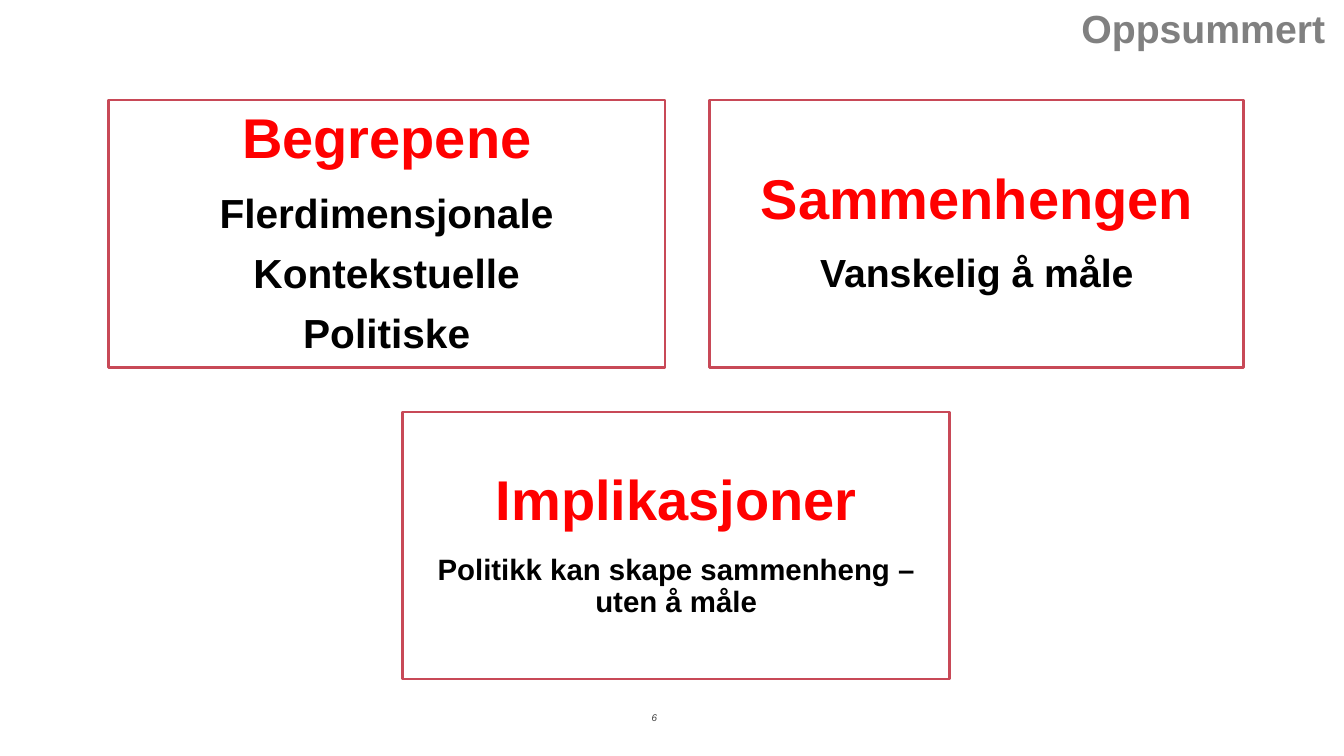
from pptx import Presentation
from pptx.dml.color import RGBColor
from pptx.enum import shapes, text
from pptx.util import Pt

COLORS = {"white": "FFFFFF", "border": "C84957", "heading": "FF0000",
          "body": "000000", "title": "808080", "number": "404040"}
ALIGN = text.PP_ALIGN
ANCHOR = text.MSO_ANCHOR


def color(name):
    return RGBColor.from_string(COLORS[name])


def write(para, words, *, size, fill, font="Arial", bold=False, italic=False,
          align=ALIGN.LEFT, line=None, after=0):
    para.alignment = align
    para.space_after = Pt(after)
    if line:
        para.line_spacing = line
    span = para.add_run()
    span.text = words
    span.font.name = font
    span.font.size = Pt(size)
    span.font.bold = bold
    span.font.italic = italic
    span.font.color.rgb = color(fill)


class SummarySlide:
    inset = 12.2
    border = 2
    heading_size = 40
    after_ratio = 0.4

    def __init__(self, deck):
        self.page = deck.slides.add_slide(deck.slide_layouts[6])

    def frame(self, box, inset, anchor):
        frame = box.text_frame
        frame.word_wrap = True
        frame.vertical_anchor = anchor
        frame.margin_left = frame.margin_right = Pt(inset)
        frame.margin_top = frame.margin_bottom = Pt(inset)
        return frame

    def label(self, words, left, top, width, height, anchor=ANCHOR.TOP, **style):
        box = self.page.shapes.add_textbox(Pt(left), Pt(top), Pt(width), Pt(height))
        write(self.frame(box, 0, anchor).paragraphs[0], words, **style)

    def card(self, heading, lines, size, left, top, width, height):
        box = self.page.shapes.add_shape(shapes.MSO_SHAPE.RECTANGLE,
                                         Pt(left), Pt(top), Pt(width), Pt(height))
        box.shadow.inherit = False
        box.fill.solid()
        box.fill.fore_color.rgb = color("white")
        box.line.color.rgb = color("border")
        box.line.width = Pt(self.border)
        frame = self.frame(box, self.inset, ANCHOR.MIDDLE)
        rows = [(heading, self.heading_size, "heading")]
        rows += [(words, size, "body") for words in lines]
        for index, (words, points, fill) in enumerate(rows):
            para = frame.add_paragraph() if index else frame.paragraphs[0]
            write(para, words, size=points, fill=fill, bold=True,
                  align=ALIGN.CENTER, line=0.9, after=points * self.after_ratio)


def main():
    deck = Presentation()
    deck.slide_width, deck.slide_height = Pt(960), Pt(540)
    slide = SummarySlide(deck)

    # Title and page number
    slide.label("Oppsummert", 772.5, 3, 187.5, 29, size=28, fill="title", bold=True)
    slide.label("6", 433.4, 508.3, 36, 8.6, anchor=ANCHOR.MIDDLE,
                size=7, fill="number", italic=True, align=ALIGN.RIGHT)

    # Cards: heading, lines, text size, width; each row is centred
    card_rows = [
        [("Begrepene", ["Flerdimensjonale", "Kontekstuelle", "Politiske"], 29, 397.5),
         ("Sammenhengen", ["Vanskelig å måle"], 28, 381.5)],
        [("Implikasjoner", ["Politikk kan skape sammenheng – uten å måle"], 21, 391)],
    ]
    center, top, height, gap = 483, 71.5, 190.8, 32
    for row in card_rows:
        total = sum(card[-1] for card in row) + gap * (len(row) - 1)
        left = center - total / 2
        for heading, lines, size, width in row:
            slide.card(heading, lines, size, left, top, width, height)
            left += width + gap
        top += height + gap

    deck.save("out.pptx")


if __name__ == "__main__":
    main()
